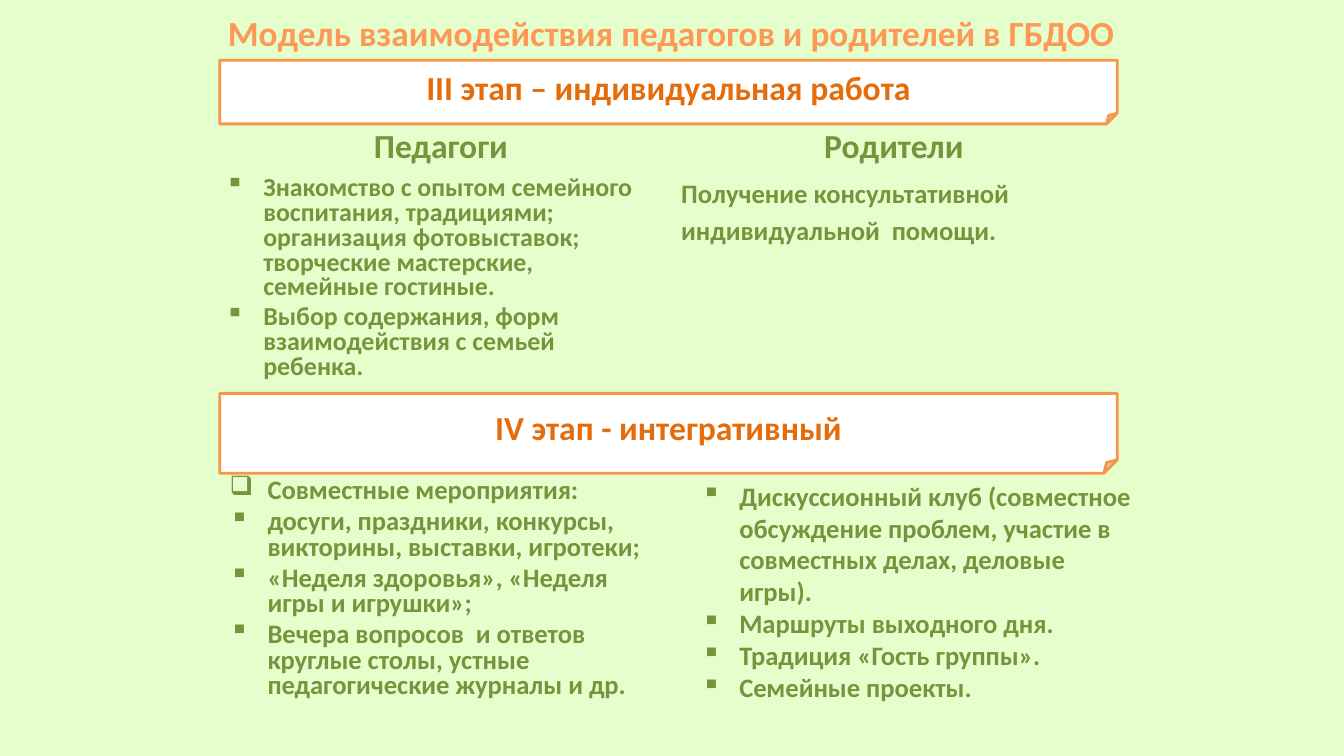
from dataclasses import dataclass

from lxml import etree
from pptx import Presentation
from pptx.dml.color import RGBColor
from pptx.enum.shapes import MSO_SHAPE
from pptx.enum.text import MSO_ANCHOR, MSO_AUTO_SIZE, PP_ALIGN
from pptx.oxml.ns import qn
from pptx.util import Pt

FOLDED_CORNER = MSO_SHAPE.FOLDED_CORNER
TOP, MIDDLE, BOTTOM = MSO_ANCHOR.TOP, MSO_ANCHOR.MIDDLE, MSO_ANCHOR.BOTTOM
NO_AUTOFIT = MSO_AUTO_SIZE.NONE
LEFT, CENTER = PP_ALIGN.LEFT, PP_ALIGN.CENTER
SQUARE, CHECKBOX = "▪", "❑"


@dataclass(frozen=True)
class Theme:
    font: str = "Calibri"
    background: RGBColor = RGBColor(0xE5, 0xFF, 0xCC)
    title: RGBColor = RGBColor(0xFF, 0x98, 0x56)
    stage: RGBColor = RGBColor(0xE4, 0x6C, 0x0A)
    border: RGBColor = RGBColor(0xF7, 0x96, 0x46)
    banner: RGBColor = RGBColor(0xFF, 0xFF, 0xFF)
    body: RGBColor = RGBColor(0x77, 0x93, 0x3C)
    title_size: float = 25.2
    heading_size: float = 24
    body_size: float = 19
    dense_size: float = 18.5


class SlideBuilder:
    def __init__(self, presentation, theme):
        self.theme = theme
        self.slide = presentation.slides.add_slide(presentation.slide_layouts[5])
        fill = self.slide.background.fill
        fill.solid()
        fill.fore_color.rgb = theme.background

    def set_text(self, shape, lines, size, color, anchor=TOP, align=LEFT):
        frame = shape.text_frame
        frame.text = "\n".join(lines)
        frame.word_wrap = True
        frame.auto_size = NO_AUTOFIT
        frame.vertical_anchor = anchor
        for paragraph in frame.paragraphs:
            paragraph.alignment = align
            paragraph.font.name = self.theme.font
            paragraph.font.size = Pt(size)
            paragraph.font.bold = True
            paragraph.font.color.rgb = color
        return frame.paragraphs

    def title(self, text, left, top, width, height):
        shape = self.slide.shapes.title
        shape.left, shape.top = Pt(left), Pt(top)
        shape.width, shape.height = Pt(width), Pt(height)
        self.set_text(shape, [text], self.theme.title_size, self.theme.title, MIDDLE, CENTER)

    def banner(self, text, left, top, width, height):
        shape = self.slide.shapes.add_shape(
            FOLDED_CORNER, Pt(left), Pt(top), Pt(width), Pt(height))
        shape.shadow.inherit = False
        shape.fill.solid()
        shape.fill.fore_color.rgb = self.theme.banner
        shape.line.color.rgb = self.theme.border
        shape.line.width = Pt(2)
        self.set_text(shape, [text], self.theme.heading_size, self.theme.stage, MIDDLE, CENTER)

    def text_box(self, left, top, width, height):
        return self.slide.shapes.add_textbox(Pt(left), Pt(top), Pt(width), Pt(height))

    def heading(self, text, left, top, width, height):
        shape = self.text_box(left, top, width, height)
        self.set_text(shape, [text], self.theme.heading_size, self.theme.body, BOTTOM, CENTER)

    def body(self, lines, left, top, width, height, size, bullets="", spacing=1.0, before=0):
        shape = self.text_box(left, top, width, height)
        paragraphs = self.set_text(shape, lines, size, self.theme.body)
        for paragraph in paragraphs:
            paragraph.line_spacing = spacing
            paragraph.space_before = Pt(before)
        for paragraph, bullet in zip(paragraphs, bullets):
            self.bullet(paragraph, bullet)

    def bullet(self, paragraph, character):
        properties = paragraph._p.get_or_add_pPr()
        properties.set("marL", str(Pt(27)))
        properties.set("indent", str(-Pt(27)))
        mark = etree.Element(qn("a:buChar"), char=character)
        properties.find(qn("a:defRPr")).addprevious(mark)


def main():
    presentation = Presentation()
    presentation.slide_width, presentation.slide_height = Pt(960), Pt(540)
    theme = Theme()
    builder = SlideBuilder(presentation, theme)

    builder.title("Модель взаимодействия педагогов и родителей в ГБДОО", 155.5, -5, 648, 56)
    builder.heading("Педагоги", 156, 88.5, 318, 33)
    builder.body(
        ["Знакомство с опытом семейного воспитания, традициями; организация "
         "фотовыставок; творческие мастерские, семейные гостиные.",
         "Выбор содержания, форм взаимодействия с семьей ребенка."],
        154, 122.5, 318, 161, theme.dense_size, SQUARE * 2, 0.8, 3.7)
    builder.heading("Родители", 479.5, 88.5, 318, 33)
    builder.body(
        ["Получение консультативной", "индивидуальной  помощи."],
        479.5, 122.5, 318, 161, theme.body_size, before=3.8)

    builder.banner("III этап – индивидуальная работа", 157, 43, 641, 45.5)
    builder.banner("IV этап - интегративный", 157, 281, 641, 57)

    builder.body(
        ["Совместные мероприятия:",
         "досуги, праздники, конкурсы, викторины, выставки, игротеки;",
         "«Неделя здоровья», «Неделя игры и игрушки»;",
         "Вечера вопросов  и ответов круглые столы, устные педагогические журналы и др."],
        157, 339, 320, 168, theme.body_size, CHECKBOX + SQUARE * 3, 0.8, 3.8)
    builder.body(
        ["Дискуссионный клуб (совместное обсуждение проблем, участие в "
         "совместных делах, деловые игры).",
         "Маршруты выходного дня.",
         "Традиция «Гость группы».",
         "Семейные проекты."],
        494, 339, 323, 180, theme.body_size, SQUARE * 4)

    presentation.save("out.pptx")


if __name__ == "__main__":
    main()
